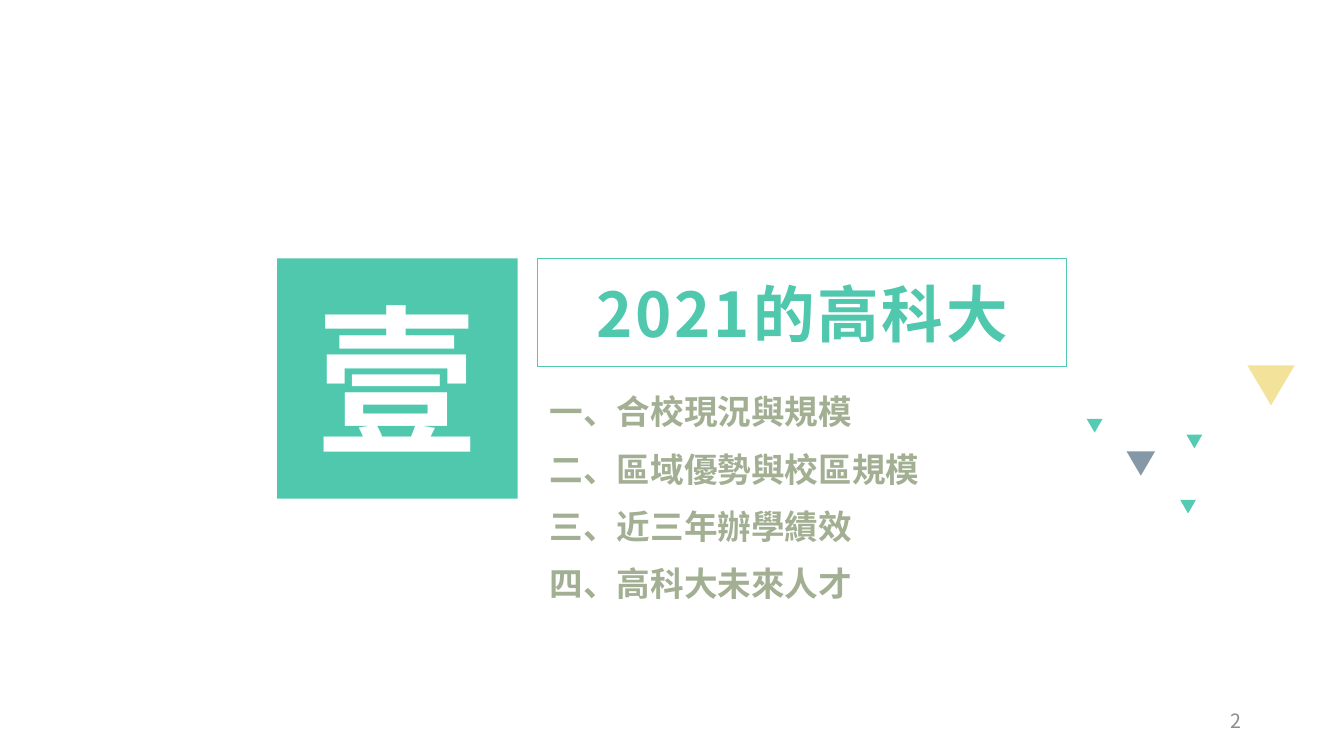
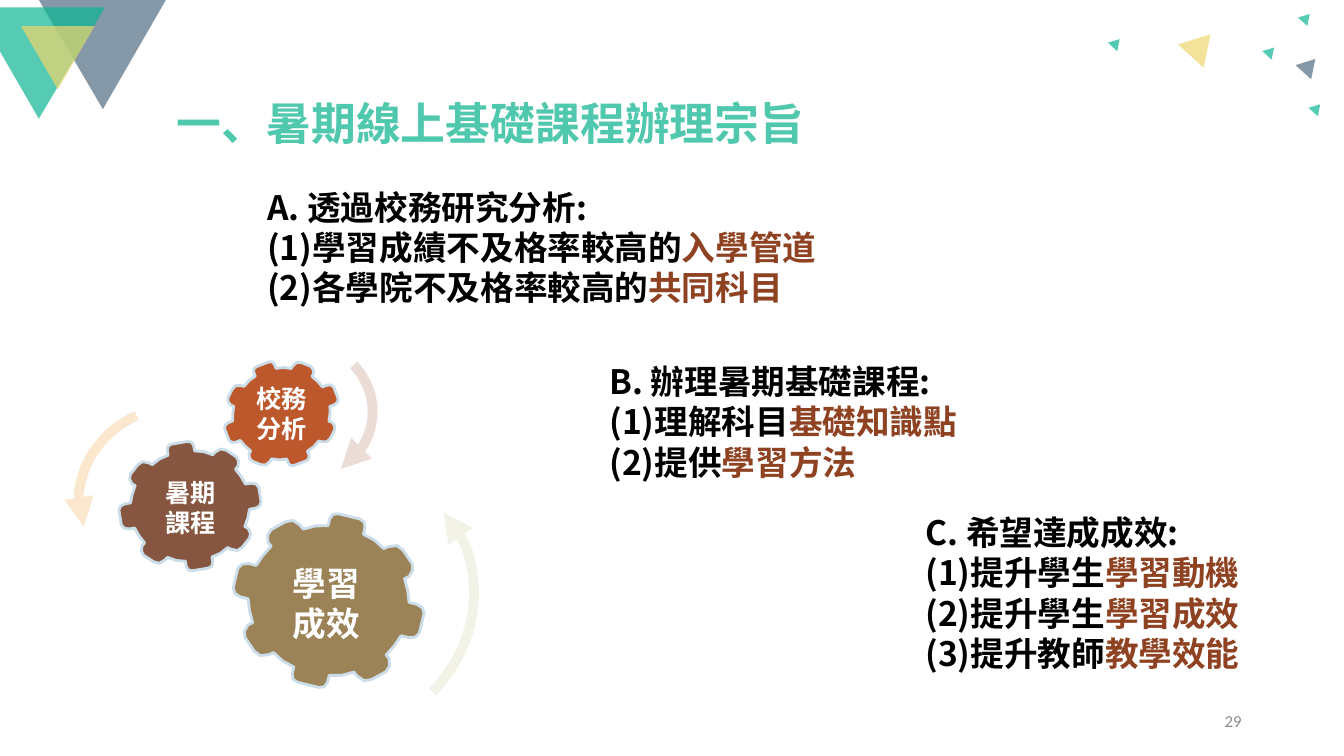
from pptx import Presentation
from pptx.dml.color import RGBColor
from pptx.enum.shapes import MSO_SHAPE
from pptx.enum.text import MSO_ANCHOR, PP_ALIGN
from pptx.oxml.ns import qn
from pptx.util import Pt
from lxml.etree import SubElement

PX = 9525
MINT, TEAL, SLATE, SAND = "50C8AE", "0CB692", "516D82", "EED66F"
SAGE, RUST, BLACK, WHITE, GRAY = "A2AF92", "8E4221", "000000", "FFFFFF", "8C8C8C"
SANS = "Noto Sans CJK SC"


def paint(shape, fill=None, opacity=100, line=None, weight=1):
    shape.shadow.inherit = False
    if fill:
        shape.fill.solid()
        shape.fill.fore_color.rgb = RGBColor.from_string(fill)
        if opacity < 100:
            color = shape.fill._xPr.find(qn("a:solidFill"))[0]
            SubElement(color, qn("a:alpha"), val=str(opacity * 1000))
    else:
        shape.fill.background()
    if line:
        shape.line.color.rgb = RGBColor.from_string(line)
        shape.line.width = Pt(weight)
    else:
        shape.line.fill.background()
    return shape


def write(shape, paragraphs, size, font=SANS, bold=True, align=PP_ALIGN.LEFT,
          anchor=MSO_ANCHOR.MIDDLE, gap=0, leading=None, tracking=0):
    frame = shape.text_frame
    frame.word_wrap = True
    frame.vertical_anchor = anchor
    for index, runs in enumerate(paragraphs):
        paragraph = frame.add_paragraph() if index else frame.paragraphs[0]
        paragraph.alignment = align
        paragraph.line_spacing = leading
        paragraph.space_before = Pt(gap if index else 0)
        paragraph.space_after = Pt(gap)
        for text, color in runs:
            run = paragraph.add_run()
            run.text = text
            run.font.size = Pt(size)
            run.font.bold = bold
            run.font.color.rgb = RGBColor.from_string(color)
            run.font.name = font
            properties = run.font._element
            SubElement(properties, qn("a:ea"), typeface=SANS)
            if tracking:
                properties.set("spc", str(tracking * 100))


prs = Presentation()
prs.slide_width, prs.slide_height = 1280 * PX, 720 * PX
section = prs.slides.add_slide(prs.slide_layouts[6]).shapes
purpose = prs.slides.add_slide(prs.slide_layouts[6]).shapes

for shapes, number, size, font in [(section, "2", 14, SANS), (purpose, "29", 12, "Calibri")]:
    footer = shapes.add_textbox(904 * PX, 667 * PX, 288 * PX, 38 * PX)
    write(footer, [[(number, GRAY)]], size, font, bold=False, align=PP_ALIGN.RIGHT)

for outline, color in [
    ([(158, 0), (37, 0), (98, 104)], SLATE),
    ([(100, 7), (0, 7), (0, 49), (37, 113)], TEAL),
]:
    builder = purpose.build_freeform(*outline[0], scale=PX)
    builder.add_line_segments(outline[1:])
    paint(builder.convert_to_shape(), color, 70)

confetti = [
    (section, 180, [
        (1188, 348, 45, 38, SAND), (1035, 399, 15, 13, TEAL), (1124, 476, 15, 13, TEAL),
        (1130, 414, 15, 13, TEAL), (1073, 430, 27, 23, SLATE)]),
    (purpose, 180, [(20, 25, 70, 60, SAND)]),
    (purpose, 42.1, [
        (1127, 29, 33, 28, SAND), (1248, 98, 12, 10, TEAL), (1238, 12, 12, 10, TEAL),
        (1204, 44, 12, 10, TEAL), (1237, 54, 20, 17, SLATE), (1057, 36, 12, 10, TEAL)]),
]
for shapes, angle, triangles in confetti:
    for left, top, width, height, color in triangles:
        triangle = shapes.add_shape(MSO_SHAPE.ISOSCELES_TRIANGLE,
                                    left * PX, top * PX, width * PX, height * PX)
        triangle.rotation = angle
        paint(triangle, color, 70)

numeral = section.add_shape(MSO_SHAPE.RECTANGLE, 264 * PX, 246 * PX, 229 * PX, 229 * PX)
paint(numeral, MINT)
frame = numeral.text_frame
frame.margin_left = frame.margin_right = frame.margin_top = frame.margin_bottom = 0
write(numeral, [[("壹", WHITE)]], 115, "Roboto Condensed", align=PP_ALIGN.CENTER)

heading = section.add_shape(MSO_SHAPE.RECTANGLE, 512 * PX, 246 * PX, 504 * PX, 103 * PX)
paint(heading, line=MINT)
write(heading, [[("2021的高科大", MINT)]], 44, align=PP_ALIGN.CENTER, tracking=2)

topics = ["一、合校現況與規模", "二、區域優勢與校區規模", "三、近三年辦學績效", "四、高科大未來人才"]
contents = section.add_textbox(514 * PX, 368 * PX, 503 * PX, 251 * PX)
write(contents, [[(topic, SAGE)] for topic in topics], 24, anchor=MSO_ANCHOR.TOP, gap=6)

title = purpose.add_textbox(159 * PX, 60 * PX, 732 * PX, 87 * PX)
write(title, [[("一、暑期線上基礎課程辦理宗旨", MINT)]], 32, "Arial", leading=1.5)

quadrant = [(11, -86), (16, -84), (18, -79), (18, -72), (30, -69), (41, -63), (45, -66),
            (53, -69), (60, -66), (72, -55), (74, -49), (72, -42), (68, -39), (74, -28),
            (78, -17), (86, -17), (92, -15), (95, -10)]
right_half = quadrant + [(x, -y) for x, y in reversed(quadrant)]
gear_outline = right_half + [(-x, -y) for x, y in right_half]
for center_x, center_y, ratio, angle, color in [
    (313, 572, 1, 13.6, "9B8357"),
    (181, 482, 0.74, -9.3, "865640"),
    (268, 394, 0.61, -20.8, "BD582C"),
]:
    builder = purpose.build_freeform(*gear_outline[0], scale=0.96 * PX * ratio)
    builder.add_line_segments(gear_outline[1:])
    gear = builder.convert_to_shape(center_x * PX, center_y * PX)
    gear.rotation = angle
    paint(gear, color, line="CCDDEA", weight=2)

for left, top, width, height, angle, start, end, arrow, color in [
    (204, 444, 241, 264, 48.2, 162, 213.19, "a:headEnd", "F3F2E6"),
    (82, 381, 165, 180, 250.2, 161.95, 213.19, "a:headEnd", "FBE6CE"),
    (206, 324, 149, 136, 0, 193.16, 30.64, "a:tailEnd", "EBDCD5"),
]:
    sweep = purpose.add_shape(MSO_SHAPE.ARC, left * PX, top * PX, width * PX, height * PX)
    sweep.rotation = angle
    sweep.adjustments[0], sweep.adjustments[1] = start, end
    paint(sweep, line=color, weight=7)
    SubElement(sweep.line._get_or_add_ln(), qn(arrow), type="triangle")

for left, top, width, height, lines, size, font in [
    (229, 524, 163, 101, ["學習", "成效"], 24, "Arial"),
    (124, 444, 115, 79, ["暑期", "課程"], 18, SANS),
    (225, 354, 86, 79, ["校務分析"], 18, SANS),
]:
    label = purpose.add_textbox(left * PX, top * PX, width * PX, height * PX)
    write(label, [[(line, WHITE)] for line in lines], size, font, align=PP_ALIGN.CENTER)

for left, top, width, height, goal, items in [
    (245, 173, 544, 126, "A. 透過校務研究分析:",
     [("(1)學習成績不及格率較高的", "入學管道"), ("(2)各學院不及格率較高的", "共同科目")]),
    (571, 339, 387, 126, "B. 辦理暑期基礎課程:",
     [("(1)理解科目", "基礎知識點"), ("(2)提供", "學習方法")]),
    (872, 483, 341, 165, "C. 希望達成成效:",
     [("(1)提升學生", "學習動機"), ("(2)提升學生", "學習成效"), ("(3)提升教師", "教學效能")]),
]:
    step = purpose.add_textbox(left * PX, top * PX, width * PX, height * PX)
    details = [[(lead, BLACK), (focus, RUST)] for lead, focus in items]
    write(step, [[(goal, BLACK)]] + details, 24, anchor=MSO_ANCHOR.TOP)

prs.save("out.pptx")
